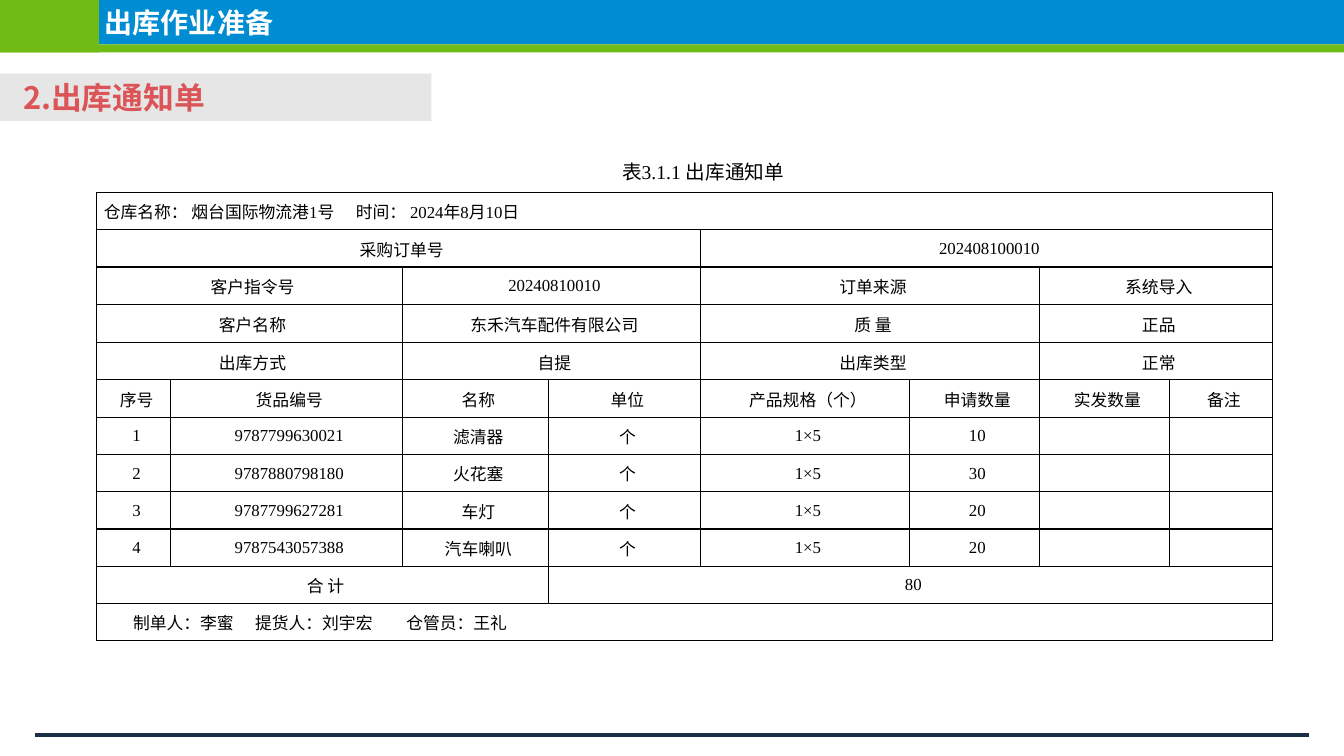
from lxml.etree import SubElement as Sub
from pptx import Presentation
from pptx.dml.color import RGBColor
from pptx.enum.shapes import MSO_CONNECTOR as Link, MSO_SHAPE as Shape
from pptx.enum.text import MSO_ANCHOR as Anchor, MSO_AUTO_SIZE as Auto, PP_ALIGN as Align
from pptx.oxml.ns import qn
from pptx.util import Inches, Pt

WIDE, HIGH = Inches(13.33), Inches(7.5)
SANS, SERIF = "Noto Sans CJK SC", "Times New Roman"
COLS = [73, 230, 145, 151, 207, 129, 129, 102]
ROWS = [43, 37, 37, 37, 38] + [37] * 8
GOODS = [
    ("9787799630021", "滤清器", 10),
    ("9787880798180", "火花塞", 30),
    ("9787799627281", "车灯", 20),
    ("9787543057388", "汽车喇叭", 20),
]
HEADS = ["序号", "货品编号", "名称", "单位", "产品规格（个）", "申请数量", "实发数量", "备注"]
PAIRS = [
    ["客户指令号", "20240810010", "订单来源", "系统导入"],
    ["客户名称", "东禾汽车配件有限公司", "质 量", "正品"],
    ["出库方式", "自提", "出库类型", "正常"],
]
NOTE = "仓库名称： 烟台国际物流港1号\t时间： 2024年8月10日"
SIGN = "制单人：李蜜\t提货人：刘宇宏\t仓管员：王礼"


def color(hex):
    """Turn a hex string into a colour."""
    return RGBColor.from_string(hex)


def place(x, y, w, h):
    """Turn percentages of the slide into a box."""
    return [int(v * side / 100) for v, side in zip((x, y, w, h), (WIDE, HIGH) * 2)]


def style(para, size, ink, face, bold=False):
    """Format the runs of a paragraph."""
    for run in para.runs:
        font = run.font
        font.size, font.bold, font.name = Pt(size), bold, face
        font.color.rgb = color(ink)
        Sub(font._element, qn("a:ea"), typeface=SANS)


def bar(slide, box, ink):
    """Draw a plain filled rectangle."""
    rect = slide.shapes.add_shape(Shape.RECTANGLE, *box)
    rect.shadow.inherit = False
    rect.fill.solid()
    rect.fill.fore_color.rgb = color(ink)
    rect.line.fill.background()
    return rect


def banner(slide, box):
    """Build the top band with the slide title."""
    x, y, w, h = box
    top = int(h * 0.85)
    bar(slide, (x, y, w, top), "008CD2")
    bar(slide, (x, y, int(w * 0.0735), h), "71BB17")
    last = bar(slide, (x, y + top, w, h - top), "71BB17")
    title = slide.shapes.title
    last._element.addnext(title._element)
    title.left, title.top = x + int(w * 0.0705), y
    title.width, title.height = int(w * 0.42), top
    frame = title.text_frame
    frame.text = "出库作业准备"
    frame.auto_size, frame.vertical_anchor = Auto.NONE, Anchor.MIDDLE
    frame.paragraphs[0].alignment = Align.LEFT
    style(frame.paragraphs[0], 20, "FFFFFF", SANS, True)


def heading(slide, box):
    """Build the grey section heading."""
    frame = bar(slide, box, "E7E6E6").text_frame
    frame.text = "2.出库通知单"
    frame.margin_left, frame.vertical_anchor = Inches(0.23), Anchor.MIDDLE
    frame.paragraphs[0].alignment = Align.LEFT
    style(frame.paragraphs[0], 22, "DB5558", SANS, True)


def footer(slide, box):
    """Draw the rule at the foot of the slide."""
    x, y, w, h = box
    rule = slide.shapes.add_connector(Link.STRAIGHT, x + w, y, x, y + h)
    rule.line.color.rgb, rule.line.width = color("1B2F47"), Pt(3)
    Sub(rule._element.spPr, qn("a:effectLst"))


def border(cell, sides):
    """Draw thin black lines on the given sides of a cell."""
    props = cell._tc.get_or_add_tcPr()
    for side in sides:
        line = Sub(props, qn("a:ln" + side), w=str(Pt(1)))
        fill = Sub(line, qn("a:solidFill"))
        Sub(fill, qn("a:srgbClr"), val="000000")


def write(cell, text, size, align, first=0, tabs=()):
    """Put one indented line of text in a cell."""
    para = cell.text_frame.paragraphs[0]
    para.text, para.alignment = text, align
    props = para._p.get_or_add_pPr()
    props.set("marL", str(Inches(0.06)))
    props.set("indent", str(Inches(first)))
    if tabs:
        stops = Sub(props, qn("a:tabLst"))
        for stop in tabs:
            Sub(stops, qn("a:tab"), pos=str(Inches(stop)), algn="l")
    style(para, size, "000000", SERIF)


def lines():
    """List each table row as pairs of span and text."""
    rows = [[(8, "表3.1.1 出库通知单")], [(8, NOTE)]]
    rows.append([(4, "采购订单号"), (4, "202408100010")])
    rows += [[(2, text) for text in row] for row in PAIRS]
    rows.append([(1, text) for text in HEADS])
    for num, (code, name, count) in enumerate(GOODS, 1):
        row = [num, code, name, "个", "1×5", count, "", ""]
        rows.append([(1, str(text)) for text in row])
    total = sum(count for *_, count in GOODS)
    return rows + [[(3, "合 计"), (5, str(total))], [(8, SIGN)]]


def notice(slide, box):
    """Build the delivery notice table."""
    table = slide.shapes.add_table(len(ROWS), len(COLS), *box).table
    table.first_row = table.horz_banding = False
    for col, part in zip(table.columns, COLS):
        col.width = int(box[2] * part / sum(COLS))
    for row, part in zip(table.rows, ROWS):
        row.height = int(box[3] * part / sum(ROWS))
    looks = {
        0: (14, Align.CENTER, 0.31),
        1: (12, Align.JUSTIFY, 0, (3.14,)),
        len(ROWS) - 1: (12, Align.JUSTIFY, 0.29, (1.5, 2.86)),
    }
    for r, row in enumerate(lines()):
        for c in range(len(COLS)):
            cell = table.cell(r, c)
            cell.margin_left = cell.margin_right = cell.margin_top = Inches(0.01)
            cell.margin_bottom, cell.vertical_anchor = 0, Anchor.MIDDLE
            border(cell, "LRTB" if r else "B")
            cell.fill.background()
        c = 0
        for span, text in row:
            cell = table.cell(r, c)
            if span > 1:
                cell.merge(table.cell(r, c + span - 1))
            write(cell, text, *looks.get(r, (12, Align.CENTER)))
            c += span


def main():
    """Build and save the slide."""
    deck = Presentation()
    deck.slide_width, deck.slide_height = WIDE, HIGH
    slide = deck.slides.add_slide(deck.slide_layouts[5])
    banner(slide, place(0, 0, 100, 6.93))
    footer(slide, place(2.63, 97.2, 94.74, 0))
    heading(slide, place(0, 9.73, 32.11, 6.27))
    notice(slide, place(7.2, 19.73, 87.47, 65.07))
    deck.save("out.pptx")


if __name__ == "__main__":
    main()
